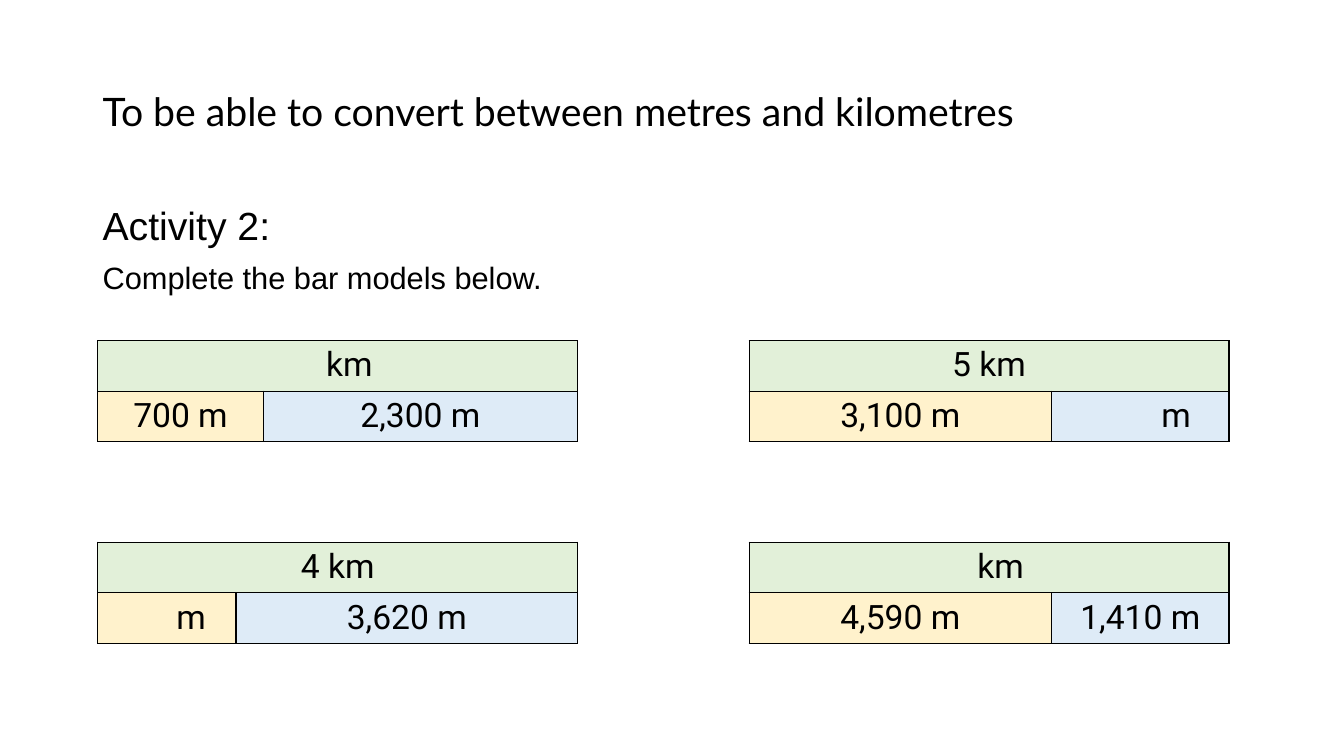
from dataclasses import dataclass

import lxml.etree
import pptx
import pptx.dml.color
import pptx.enum.text
import pptx.oxml.ns
import pptx.util

Inches = pptx.util.Inches
Anchor = pptx.enum.text.MSO_ANCHOR
Align = pptx.enum.text.PP_ALIGN


@dataclass(frozen=True)
class Theme:
    ink: str = "000000"
    whole: str = "E2F0D9"
    left_part: str = "FFF2CC"
    right_part: str = "DEEBF7"
    title_font: str = "Lato"
    body_font: str = "Arial"
    bar_font: str = "Roboto"
    heading_size: int = 28
    instruction_size: int = 22
    bar_size: int = 24
    border_width: int = 1


@dataclass(frozen=True)
class Label:
    """A bar label; answer_gap is the room in inches left before its unit."""
    text: str
    answer_gap: float = 0


@dataclass(frozen=True)
class BarModel:
    whole: Label
    left_part: Label
    right_part: Label
    split: float


THEME = Theme()
BAR_WIDTH = 4.76
ROW_HEIGHT = 0.49
CELL_MARGIN = 0.1
COLUMN_LEFTS = (0.97, 7.43)
ROW_TOPS = (3.38, 5.38)
BAR_MODELS = (
    BarModel(Label("km", 0.23), Label("700 m"), Label("2,300 m"), 1.64),
    BarModel(Label("5 km"), Label("3,100 m"), Label("m", 0.71), 3),
    BarModel(Label("4 km"), Label("m", 0.48), Label("3,620 m"), 1.37),
    BarModel(Label("km", 0.23), Label("4,590 m"), Label("1,410 m"), 3),
)


def write(para, text: str, *, font: str, size: float, color: str = THEME.ink,
          align=Align.LEFT, line_spacing: float = 1.0, space_before: float = 0) -> None:
    para.alignment = align
    para.line_spacing = line_spacing
    para.space_before = pptx.util.Pt(space_before)
    span = para.add_run()
    span.text = text
    span.font.name = font
    span.font.size = pptx.util.Pt(size)
    span.font.color.rgb = pptx.dml.color.RGBColor.from_string(color)


def add_text_frame(page, left: float, top: float, width: float, height: float, anchor):
    box = page.shapes.add_textbox(*map(Inches, (left, top, width, height)))
    frame = box.text_frame
    frame.word_wrap = True
    frame.vertical_anchor = anchor
    return frame


def add_borders(cell) -> None:
    properties = cell._tc.get_or_add_tcPr()
    name = pptx.oxml.ns.qn
    for index, side in enumerate(("lnL", "lnR", "lnT", "lnB")):
        border = lxml.etree.Element(name(f"a:{side}"), w=str(pptx.util.Pt(THEME.border_width)))
        fill = lxml.etree.SubElement(border, name("a:solidFill"))
        lxml.etree.SubElement(fill, name("a:srgbClr"), val=THEME.ink)
        properties.insert(index, border)


def fill_cell(cell, label: Label, color: str) -> None:
    cell.fill.solid()
    cell.fill.fore_color.rgb = pptx.dml.color.RGBColor.from_string(color)
    cell.margin_left = Inches(CELL_MARGIN + label.answer_gap)
    write(cell.text_frame.paragraphs[0], label.text, font=THEME.bar_font,
          size=THEME.bar_size, align=Align.CENTER)


def add_bar_model(page, model: BarModel, left: float, top: float) -> None:
    frame = page.shapes.add_table(2, 2, *map(Inches, (left, top, BAR_WIDTH, 2 * ROW_HEIGHT)))
    table = frame.table
    table.first_row = table.horz_banding = False
    for column, width in zip(table.columns, (model.split, BAR_WIDTH - model.split)):
        column.width = Inches(width)
    for row in table.rows:
        row.height = Inches(ROW_HEIGHT)
    table.cell(0, 0).merge(table.cell(0, 1))
    fill_cell(table.cell(0, 0), model.whole, THEME.whole)
    fill_cell(table.cell(1, 0), model.left_part, THEME.left_part)
    fill_cell(table.cell(1, 1), model.right_part, THEME.right_part)
    for cell in table.iter_cells():
        add_borders(cell)


def main() -> None:
    deck = pptx.Presentation()
    deck.slide_width, deck.slide_height = Inches(13.33), Inches(7.5)
    page = deck.slides.add_slide(deck.slide_layouts[6])

    title = add_text_frame(page, 0.92, 0.4, 9.6, 1.45, Anchor.MIDDLE)
    write(title.paragraphs[0], "To be able to convert between metres and kilometres",
          font=THEME.title_font, size=THEME.heading_size, line_spacing=0.9)

    activity = add_text_frame(page, 0.92, 2, 11.5, 1.2, Anchor.TOP)
    write(activity.paragraphs[0], "Activity 2:", font=THEME.body_font,
          size=THEME.heading_size, line_spacing=0.9)
    write(activity.add_paragraph(), "Complete the bar models below.", font=THEME.body_font,
          size=THEME.instruction_size, line_spacing=0.9, space_before=10)

    for index, model in enumerate(BAR_MODELS):
        row, column = divmod(index, len(COLUMN_LEFTS))
        add_bar_model(page, model, COLUMN_LEFTS[column], ROW_TOPS[row])

    deck.save("out.pptx")


if __name__ == "__main__":
    main()
